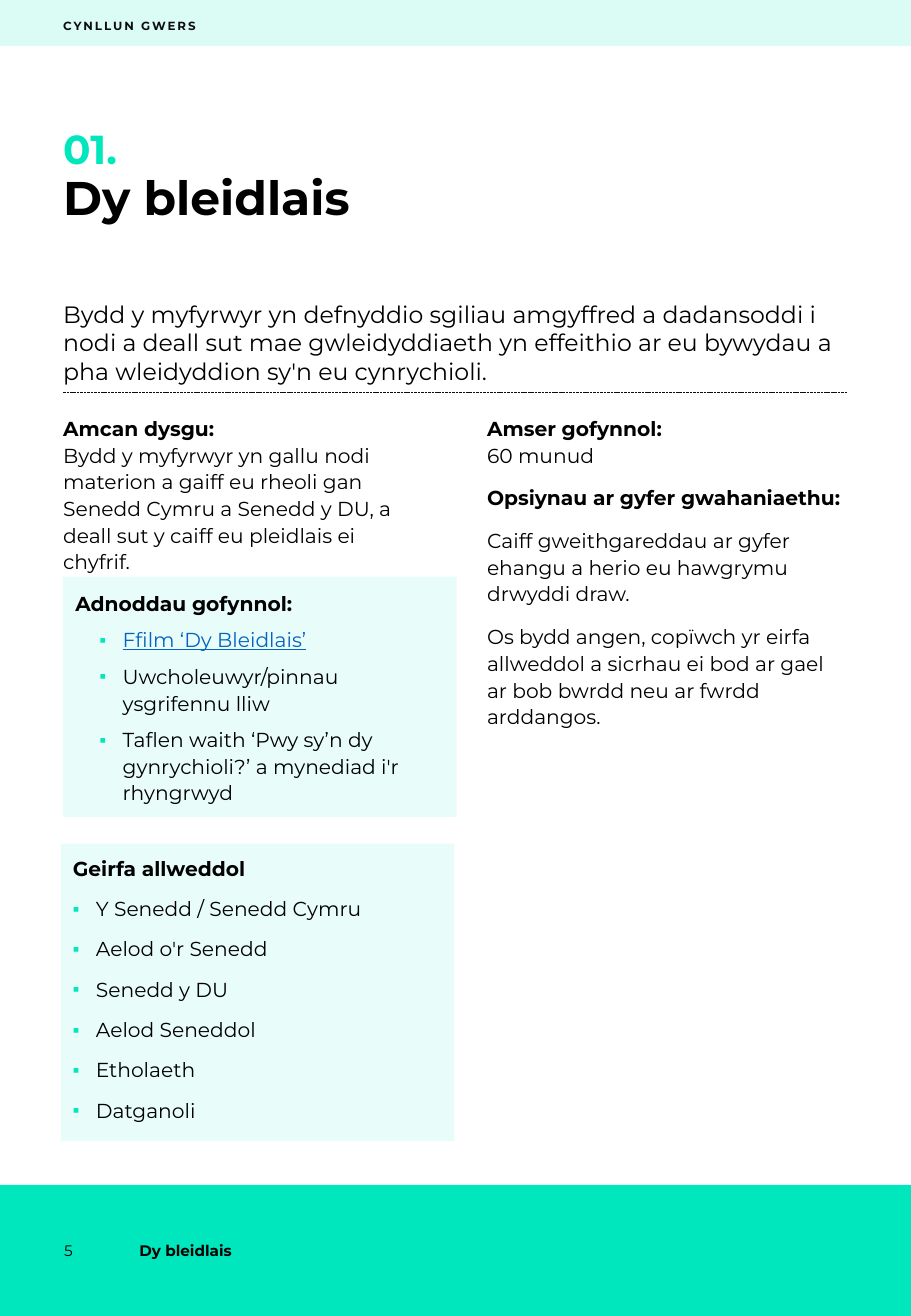
from dataclasses import dataclass

from lxml import etree
from pptx import Presentation
from pptx import util as u
from pptx.dml.color import RGBColor
from pptx.enum import dml, shapes, text
from pptx.oxml.ns import qn

PX = 9144  # EMU in one px, 100 px to the inch
WIDTH, HEIGHT = 750, 1084
LEFT, COLUMN_2 = 52, 401
FOOTER_TOP, FOOTER_H = 976, 108
TOP, MIDDLE = text.MSO_ANCHOR.TOP, text.MSO_ANCHOR.MIDDLE


@dataclass(frozen=True)
class Theme:
    font: str = "Montserrat"
    accent: str = "00E7BD"
    ink: str = "000000"
    soft_ink: str = "0D0D0D"
    link: str = "0563C1"
    header: float = 7
    footer: float = 9
    body: float = 12
    intro: float = 14
    number: float = 24
    title: float = 28


def px(n):
    return u.Emu(n * PX)


class Page:
    def __init__(self, prs, theme):
        self.theme = theme
        self.slide = prs.slides.add_slide(prs.slide_layouts.get_by_name("Comparison"))

    def fill(self, sp, opacity=100):
        sp.fill.solid()
        sp.fill.fore_color.rgb = RGBColor.from_string(self.theme.accent)
        if opacity < 100:
            clr = sp.fill._xPr.find(".//" + qn("a:srgbClr"))
            etree.SubElement(clr, qn("a:alpha"), val=str(opacity * 1000))

    def band(self, y, h, opacity=100):
        sp = self.slide.shapes.add_shape(
            shapes.MSO_SHAPE.RECTANGLE, 0, px(y), px(WIDTH), px(h))
        sp.shadow.inherit = False
        sp.line.fill.background()
        self.fill(sp, opacity)

    def rule(self, x1, x2, y):
        line = self.slide.shapes.add_connector(
            shapes.MSO_CONNECTOR.STRAIGHT, px(x1), px(y), px(x2), px(y))
        line.line.color.rgb = RGBColor.from_string(self.theme.soft_ink)
        line.line.width = u.Pt(0.5)
        line.line.dash_style = dml.MSO_LINE.SQUARE_DOT
        etree.SubElement(line._element.spPr, qn("a:effectLst"))

    def frame(self, sp, insets, anchor):
        """Set insets (left, top, right, bottom) and return the text frame."""
        tf = sp.text_frame
        tf.word_wrap = True
        tf.auto_size = text.MSO_AUTO_SIZE.NONE
        tf.vertical_anchor = anchor
        tf.margin_left, tf.margin_top, tf.margin_right, tf.margin_bottom = map(px, insets)
        return tf

    def box(self, x, y, w, h, insets=(0, 0, 0, 0), anchor=TOP):
        sp = self.slide.shapes.add_textbox(px(x), px(y), px(w), px(h))
        return self.frame(sp, insets, anchor)

    def holder(self, idx, x, y, w, h, insets=(0, 0, 0, 0), opacity=0):
        """Move a template placeholder into place and return its text frame."""
        sp = self.slide.placeholders[idx]
        sp.left, sp.top, sp.width, sp.height = map(px, (x, y, w, h))
        if opacity:
            self.fill(sp, opacity)
        return self.frame(sp, insets, TOP)

    def para(self, tf, spacing=1.0, before=7.5, after=2, indent=0, bullet=False):
        p = tf.paragraphs[0]
        first = not p.runs
        if not first:
            p = tf.add_paragraph()
        pPr = p._p.get_or_add_pPr()
        pPr.set("marL", str(px(indent)))
        pPr.set("indent", str(-px(19) if bullet else 0))
        if bullet:
            clr = etree.SubElement(pPr, qn("a:buClr"))
            etree.SubElement(clr, qn("a:srgbClr"), val=self.theme.accent)
            etree.SubElement(pPr, qn("a:buSzPct"), val="80000")
            etree.SubElement(pPr, qn("a:buFont"), typeface=self.theme.font)
            etree.SubElement(pPr, qn("a:buChar"), char="▪")
        else:
            etree.SubElement(pPr, qn("a:buNone"))
        p.alignment = text.PP_ALIGN.LEFT
        p.line_spacing = spacing
        p.space_before = u.Pt(0 if first else before)
        p.space_after = u.Pt(after)
        return p

    def run(self, p, words, size=None, color=None, bold=False, underline=False, tracking=0):
        r = p.add_run()
        r.text = words
        f = r.font
        f.name = self.theme.font
        f.size = u.Pt(size or self.theme.body)
        f.bold, f.underline = bold, underline
        f.color.rgb = RGBColor.from_string(color or self.theme.ink)
        if tracking:
            r._r.get_or_add_rPr().set("spc", str(tracking))

    def headed(self, tf, heading, words):
        """Add a bold heading with its text on the next line."""
        p = self.para(tf, 1.1)
        self.run(p, heading, bold=True)
        p.add_line_break()
        self.run(p, words)

    def bullets(self, tf, heading, items, spacing, before, indent):
        """Add a bold heading and a list of (words, run style) items."""
        self.run(self.para(tf, spacing), heading, bold=True)
        for words, style in items:
            p = self.para(tf, spacing, before, indent=indent, bullet=True)
            self.run(p, words, **style)


def main():
    prs = Presentation()
    prs.slide_width, prs.slide_height = px(WIDTH), px(HEIGHT)
    theme = Theme()
    s = Page(prs, theme)
    padding = (10, 10, 10, 10)

    s.band(0, 38, opacity=14)
    s.band(FOOTER_TOP, FOOTER_H)

    header = s.box(LEFT, 7, 270, 28, anchor=MIDDLE)
    s.run(s.para(header), "CYNLLUN GWERS", theme.header, theme.soft_ink,
          bold=True, tracking=120)
    number = s.box(LEFT, 102, 646, 37)
    s.run(s.para(number), "01.", theme.number, theme.accent, bold=True)
    title = s.holder(0, LEFT, 144, 646, 88)
    s.run(s.para(title, 0.9, after=0), "Dy bleidlais", theme.title, bold=True)

    intro = s.holder(1, LEFT, 247, 646, 70)
    s.run(s.para(intro),
          "Bydd y myfyrwyr yn defnyddio sgiliau amgyffred a dadansoddi i nodi a deall "
          "sut mae gwleidyddiaeth yn effeithio ar eu bywydau a pha wleidyddion sy'n eu "
          "cynrychioli.", theme.intro)
    s.rule(LEFT, 697, 323)

    aim = s.holder(2, LEFT, 341, 296, 142, insets=(0, 0, 0, 10))
    s.headed(aim, "Amcan dysgu:",
             "Bydd y myfyrwyr yn gallu nodi materion a gaiff eu rheoli gan Senedd Cymru a "
             "Senedd y DU, a deall sut y caiff eu pleidlais ei chyfrif.")

    resources = s.holder(3, LEFT, 475, 324, 198, padding, opacity=9)
    s.bullets(resources, "Adnoddau gofynnol:", [
        ("Ffilm ‘Dy Bleidlais’", {"color": theme.link, "underline": True}),
        ("Uwcholeuwyr/pinnau ysgrifennu lliw", {}),
        ("Taflen waith ‘Pwy sy’n dy gynrychioli?’ a mynediad i'r rhyngrwyd", {}),
    ], spacing=1.1, before=3.8, indent=39)

    glossary = s.holder(4, 50, 695, 324, 245, padding, opacity=9)
    terms = ["Y Senedd / Senedd Cymru", "Aelod o'r Senedd", "Senedd y DU",
             "Aelod Seneddol", "Etholaeth", "Datganoli"]
    s.bullets(glossary, "Geirfa allweddol", [(term, {}) for term in terms],
              spacing=1.0, before=7.5, indent=19)

    options = s.box(COLUMN_2, 341, 295, 614)
    s.headed(options, "Amser gofynnol:", "60 munud")
    s.run(s.para(options, 1.1), "Opsiynau ar gyfer gwahaniaethu:", bold=True)
    for words in (
        "Caiff gweithgareddau ar gyfer ehangu a herio eu hawgrymu drwyddi draw.",
        "Os bydd angen, copïwch yr eirfa allweddol a sicrhau ei bod ar gael ar bob "
        "bwrdd neu ar fwrdd arddangos.",
    ):
        s.run(s.para(options, 1.1), words)

    for x, w, words, bold in ((43, 62, "5", False), (105, 277, "Dy bleidlais", True)):
        footer = s.box(x, FOOTER_TOP, w, FOOTER_H, (10, 5, 10, 5), MIDDLE)
        s.run(s.para(footer, after=0), words, theme.footer, bold=bold)

    prs.save("out.pptx")


if __name__ == "__main__":
    main()
